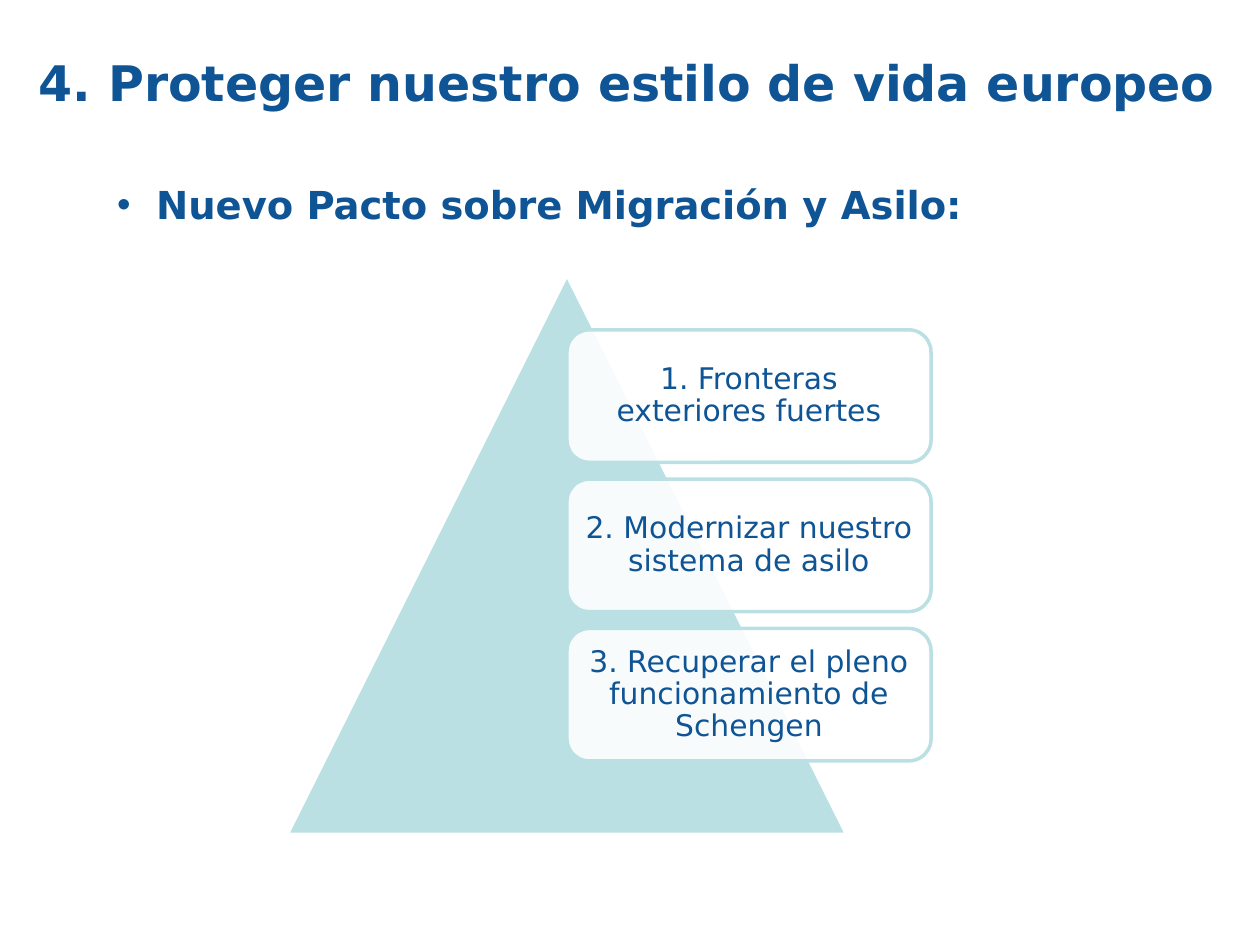
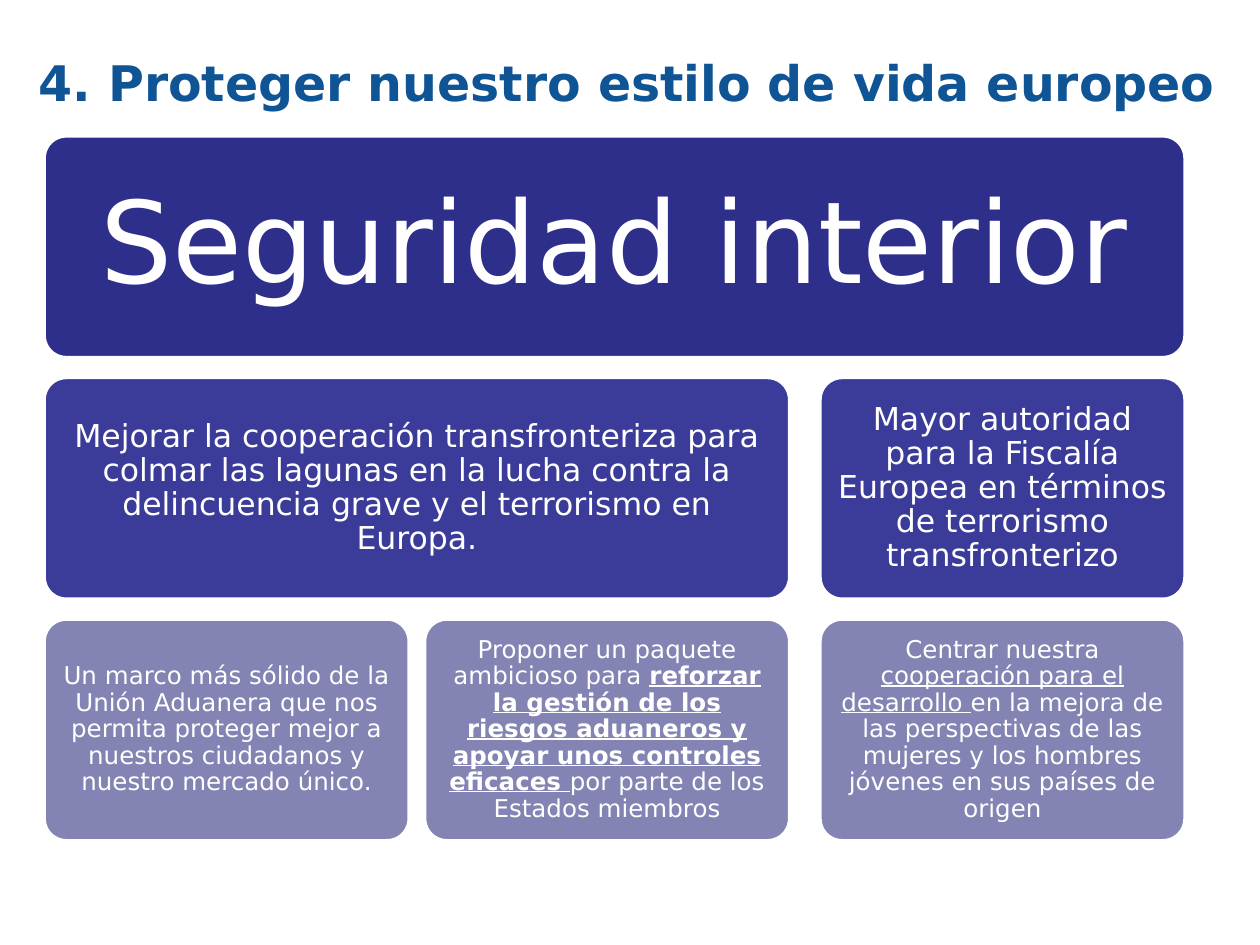
from dataclasses import dataclass
from lxml.etree import SubElement
from pptx import Presentation
from pptx.dml.color import RGBColor as Rgb
from pptx.enum.shapes import MSO_SHAPE as Shape
from pptx.enum.text import MSO_ANCHOR as Anchor, PP_ALIGN as Align
from pptx.oxml.ns import qn
from pptx.util import Cm, Pt


@dataclass(frozen=True)
class Theme:
    font: str = "DejaVu Sans"
    blue: Rgb = Rgb(0x0F, 0x54, 0x94)
    aqua: Rgb = Rgb(0xBB, 0xE0, 0xE3)
    white: Rgb = Rgb(0xFF, 0xFF, 0xFF)
    navy: Rgb = Rgb(0x2E, 0x2E, 0x8B)
    indigo: Rgb = Rgb(0x3B, 0x3B, 0x9A)
    lavender: Rgb = Rgb(0x84, 0x84, 0xB4)
    title_size: int = 28
    bullet_size: int = 22
    step_size: int = 17
    headline_size: int = 65
    measure_size: int = 18
    detail_size: int = 14
    outline: int = 2


theme = Theme()


def write(paragraph, runs, size, color):
    """Add (text, bold, underline) runs to a paragraph."""
    for text, bold, underline in runs:
        run = paragraph.add_run()
        run.text = text
        run.font.name = theme.font
        run.font.size = Pt(size)
        run.font.color.rgb = color
        run.font.bold = bold
        run.font.underline = underline


def add_panel(slide, kind, box, fill, line, runs=(), size=0, color=None, inset=0):
    """Add a filled, outlined shape with centred text."""
    shape = slide.shapes.add_shape(kind, *map(Cm, box))
    shape.shadow.inherit = False
    shape.fill.solid()
    shape.fill.fore_color.rgb = fill
    shape.line.color.rgb = line
    shape.line.width = Pt(theme.outline)
    if runs:
        frame = shape.text_frame
        frame.word_wrap = True
        frame.vertical_anchor = Anchor.MIDDLE
        frame.margin_left = frame.margin_right = Cm(inset)
        frame.margin_top = frame.margin_bottom = Cm(inset)
        paragraph = frame.paragraphs[0]
        paragraph.alignment = Align.CENTER
        paragraph.line_spacing = 0.9
        write(paragraph, runs, size, color)
    return shape


presentation = Presentation()
presentation.slide_width, presentation.slide_height = Cm(25.4), Cm(19.05)
blank = presentation.slide_layouts[6]
pact_slide, security_slide = [presentation.slides.add_slide(blank) for _ in range(2)]

# Pact: bullet
bullet_box = pact_slide.shapes.add_textbox(Cm(0.84), Cm(3.53), Cm(22.86), Cm(10.08))
bullet_box.text_frame.word_wrap = True
paragraph = bullet_box.text_frame.paragraphs[0]
write(paragraph, [("Nuevo Pacto sobre Migración y Asilo:", True, False)],
      theme.bullet_size, theme.blue)
properties = paragraph._p.get_or_add_pPr()
properties.set("marL", str(Cm(2.06)))
properties.set("indent", str(Cm(-0.79)))
SubElement(properties, qn("a:buFont")).set("typeface", "Arial")
SubElement(properties, qn("a:buChar")).set("char", "•")

# Pact: pyramid with three steps
add_panel(pact_slide, Shape.ISOSCELES_TRIANGLE, (5.79, 5.54, 11.28, 11.28),
          theme.aqua, theme.white)
steps = [
    "1. Fronteras exteriores fuertes",
    "2. Modernizar nuestro sistema de asilo",
    "3. Recuperar el pleno funcionamiento de Schengen",
]
for index, step in enumerate(steps):
    panel = add_panel(pact_slide, Shape.ROUNDED_RECTANGLE,
                      (11.43, 6.65 + 3.01 * index, 7.34, 2.67),
                      theme.white, theme.aqua, [(step, False, False)],
                      theme.step_size, theme.blue, 0.18)
    fill_color = panel._element.spPr.find(qn("a:solidFill"))[0]
    SubElement(fill_color, qn("a:alpha")).set("val", "90000")

# Security: rows of panels, each spanning first to last column
column_lefts = [0.89, 8.56, 16.53]
column_width = 7.36
row_top, row_pitch, row_height = 2.74, 4.87, 4.47
rows = [
    (theme.navy, theme.headline_size, 0.69, [
        (0, 2, [("Seguridad interior", False, False)]),
    ]),
    (theme.indigo, theme.measure_size, 0.18, [
        (0, 1, [("Mejorar la cooperación transfronteriza para colmar las lagunas en la "
                 "lucha contra la delincuencia grave y el terrorismo en Europa.",
                 False, False)]),
        (2, 2, [("Mayor autoridad para la Fiscalía Europea en términos de terrorismo "
                 "transfronterizo", False, False)]),
    ]),
    (theme.lavender, theme.detail_size, 0.15, [
        (0, 0, [("Un marco más sólido de la Unión Aduanera que nos permita proteger "
                 "mejor a nuestros ciudadanos y nuestro mercado único.", False, False)]),
        (1, 1, [("Proponer un paquete ambicioso para ", False, False),
                ("reforzar la gestión de los riesgos aduaneros y apoyar unos controles "
                 "eficaces ", True, True),
                ("por parte de los Estados miembros", False, False)]),
        (2, 2, [("Centrar nuestra ", False, False),
                ("cooperación para el desarrollo ", False, True),
                ("en la mejora de las perspectivas de las mujeres y los hombres jóvenes "
                 "en sus países de origen", False, False)]),
    ]),
]
for index, (fill, size, inset, panels) in enumerate(rows):
    for first, last, runs in panels:
        left = column_lefts[first]
        width = column_lefts[last] + column_width - left
        panel = add_panel(security_slide, Shape.ROUNDED_RECTANGLE,
                          (left, row_top + row_pitch * index, width, row_height),
                          fill, theme.white, runs, size, theme.white, inset)
        panel.adjustments[0] = 0.1

# Shared title
for slide in (pact_slide, security_slide):
    title = slide.shapes.add_textbox(Cm(-0.51), Cm(0.91), Cm(26.64), Cm(2.59))
    frame = title.text_frame
    frame.word_wrap = True
    frame.vertical_anchor = Anchor.TOP
    frame.margin_top = Cm(0.15)
    frame.margin_right = Cm(0.6)
    paragraph = frame.paragraphs[0]
    paragraph.alignment = Align.CENTER
    write(paragraph, [("4. Proteger nuestro estilo de vida europeo", True, False)],
          theme.title_size, theme.blue)

presentation.save("out.pptx")
